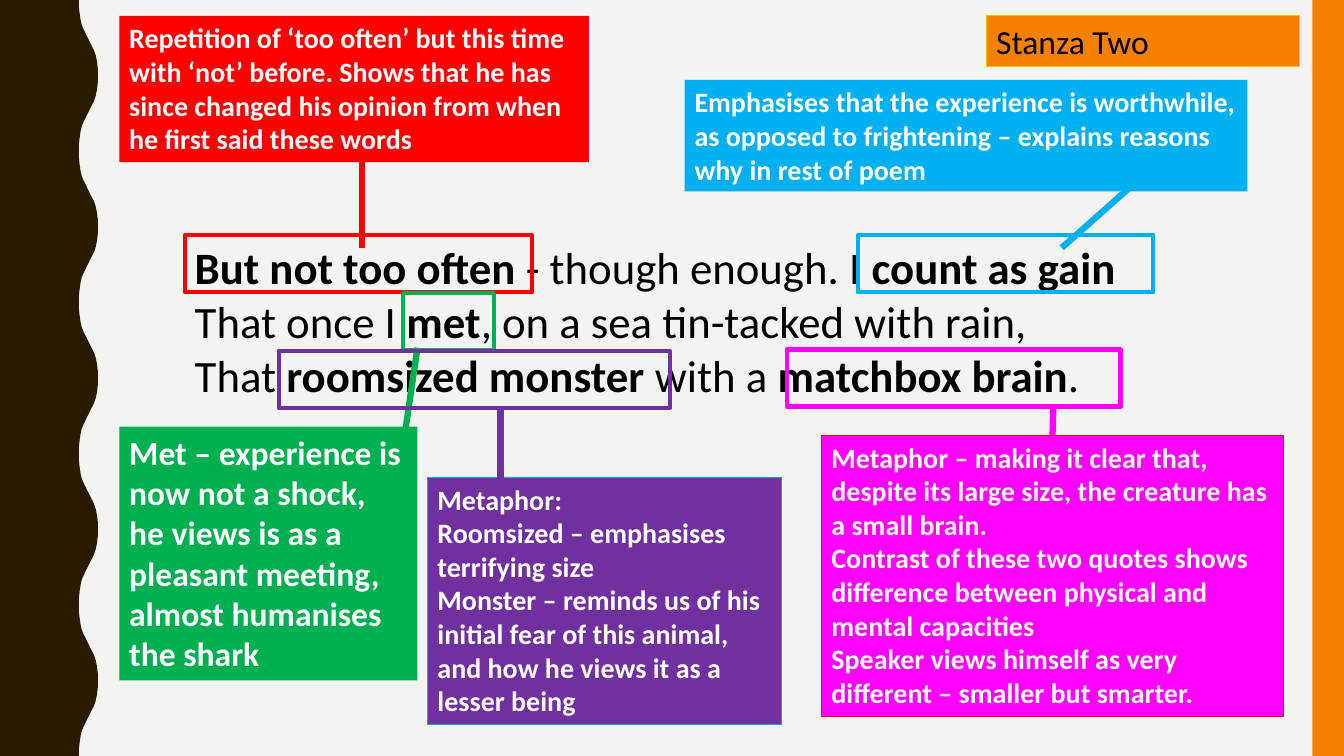
from pptx import Presentation
from pptx.dml.color import RGBColor
from pptx.enum.dml import MSO_THEME_COLOR
from pptx.enum.shapes import MSO_CONNECTOR, MSO_SHAPE
from pptx.enum.text import MSO_AUTO_SIZE
from pptx.oxml.ns import qn
from pptx.util import Inches, Pt
from lxml import etree

RECTANGLE = MSO_SHAPE.RECTANGLE
STRAIGHT = MSO_CONNECTOR.STRAIGHT
GROW = MSO_AUTO_SIZE.SHAPE_TO_FIT_TEXT
TOP = 0

THEME = {
    "paper": "F3F3F2", "wave": "2A1A00", "orange": "F68100", "gold": "FFC000",
    "red": "FF0000", "blue": "00B0F0", "green": "00B050", "purple": "7030A0",
    "pink": "FF00FF", "white": "FFFFFF", "black": "000000",
    "font": "Calibri", "poem": 32, "large": 24, "note": 20,
    "thin": 0.75, "frame": 3, "pointer": 4.5,
}
COLUMNS, ROWS = 160, 90
CELL = Inches(13.333) / COLUMNS


def cells(*counts):
    return [round(count * CELL) for count in counts]


def write(box, paragraphs, size, color, bold):
    frame = box.text_frame
    frame.word_wrap = True
    frame.auto_size = GROW
    for index, pieces in enumerate(paragraphs):
        para = frame.paragraphs[0] if index == 0 else frame.add_paragraph()
        for number, words in enumerate(pieces):
            span = para.add_run()
            span.text = words
            style = {"name": THEME["font"], "size": Pt(THEME[size]),
                     "bold": bold[index][number] if isinstance(bold, list) else bold}
            for attribute, value in style.items():
                setattr(span.font, attribute, value)
            span.font.color.rgb = RGBColor.from_string(THEME[color])


deck = Presentation()
deck.slide_width, deck.slide_height = cells(COLUMNS, ROWS)
page = deck.slides.add_slide(deck.slide_layouts[6])
page.background.fill.solid()
page.background.fill.fore_color.rgb = RGBColor.from_string(THEME["paper"])

PERIOD = 18
swell = [(9.4, 0), (9.4, 0.84), (9.5, 1.68), (9.6, 2.4), (9.75, 3), (9.96, 3.5),
         (10.2, 4), (10.45, 4.5), (10.7, 5), (10.95, 5.5), (11.2, 6),
         (11.4, 6.6), (11.55, 7.32), (11.65, 8.16), (11.65, 9)]
crest = swell + [(x, PERIOD - y) for x, y in reversed(swell[:-1])]
edge = [cells(x, y + start) for start in range(0, ROWS, PERIOD) for x, y in crest]
builder = page.shapes.build_freeform(0, 0)
builder.add_line_segments(edge + [cells(0, ROWS)], close=True)
wave = builder.convert_to_shape()
stripe = page.shapes.add_shape(RECTANGLE, *cells(156.25, 0, 3.75, ROWS))
for band, color in ((wave, "wave"), (stripe, "orange")):
    band.shadow.inherit = False
    band.fill.solid()
    band.fill.fore_color.rgb = RGBColor.from_string(THEME[color])
    band.line.fill.background()

poem = page.shapes.add_textbox(*cells(22, 28, 119.2, 20.6))
write(poem, [
    ["But not too often ", "- though enough. ", "I count as gain"],
    ["That once I ", "met", ", on a sea tin-tacked with rain,"],
    ["That ", "roomsized monster ", "with a ", "matchbox brain", "."],
], "poem", "black", [
    [True, False, True],
    [False, True, False],
    [False, True, False, True, False],
])

notes = [
    ("red", None, (14.2, 1.9, 55.9, 17.4), "note", "white",
     ["Repetition of ‘too often’ but this time with ‘not’ before. Shows that he has "
      "since changed his opinion from when he first said these words"]),
    ("blue", None, (81.5, 9.5, 67, 13.3), "note", "white",
     ["Emphasises that the experience is worthwhile, as opposed to frightening – "
      "explains reasons why in rest of poem"]),
    ("green", None, (14.2, 50.8, 35.5, 30.2), "large", "white",
     ["Met – experience is now not a shock, he views is as a pleasant meeting, "
      "almost humanises the shark"]),
    ("orange", "gold", (117.4, 1.9, 37.3, 6), "large", "black", ["Stanza Two"]),
    ("purple", "blue", (50.9, 56.8, 42.2, 29.5), "note", "white",
     ["Metaphor:",
      "Roomsized – emphasises terrifying size",
      "Monster – reminds us of his initial fear of this animal, and how he views "
      "it as a lesser being"]),
    ("pink", "red", (97.8, 51.8, 55, 33.5), "note", "white",
     ["Metaphor – making it clear that, despite its large size, the creature has "
      "a small brain.",
      "Contrast of these two quotes shows difference between physical and mental "
      "capacities",
      "Speaker views himself as very different – smaller but smarter."]),
]
boxes = {}
for fill, outline, place, size, ink, paragraphs in notes:
    box = boxes[fill] = page.shapes.add_textbox(*cells(*place))
    box.fill.solid()
    box.fill.fore_color.rgb = RGBColor.from_string(THEME[fill])
    if outline:
        box.line.color.rgb = RGBColor.from_string(THEME[outline])
        box.line.width = Pt(THEME["thin"])
    write(box, [[words] for words in paragraphs], size, ink, ink == "white")

pointers = {
    "red": (43.1, 19.2, 43.1, 29.5),
    "blue": (136, 21, 126.4, 29.5),
    "green": (49.7, 41.4, 48, 53),
    "purple": (59.6, 48.6, 59.6, 57.2),
    "pink": (125.4, 48.5, 125.3, 51.8),
}
for color, ends in pointers.items():
    pointer = page.shapes.add_connector(STRAIGHT, *cells(*ends))
    pointer.line.color.rgb = RGBColor.from_string(THEME[color])
    pointer.line.width = Pt(THEME["pointer"])
    etree.SubElement(pointer.element.spPr, qn("a:effectLst"))
    if color == "pink":
        pointer.end_connect(boxes[color], TOP)

FRAME_HEIGHT = 6.8
quotes = {
    "red": (22, 28, 41.3),
    "blue": (102.1, 28, 35.2),
    "green": (48, 34.9, 10.8),
    "purple": (33.2, 41.8, 46.6),
    "pink": (93.7, 41.6, 39.7),
}
for color, place in quotes.items():
    quote = page.shapes.add_shape(RECTANGLE, *cells(*place, FRAME_HEIGHT))
    quote.shadow.inherit = False
    quote.fill.background()
    quote.line.color.rgb = RGBColor.from_string(THEME[color])
    quote.line.width = Pt(THEME["frame"])

deck.save("out.pptx")
